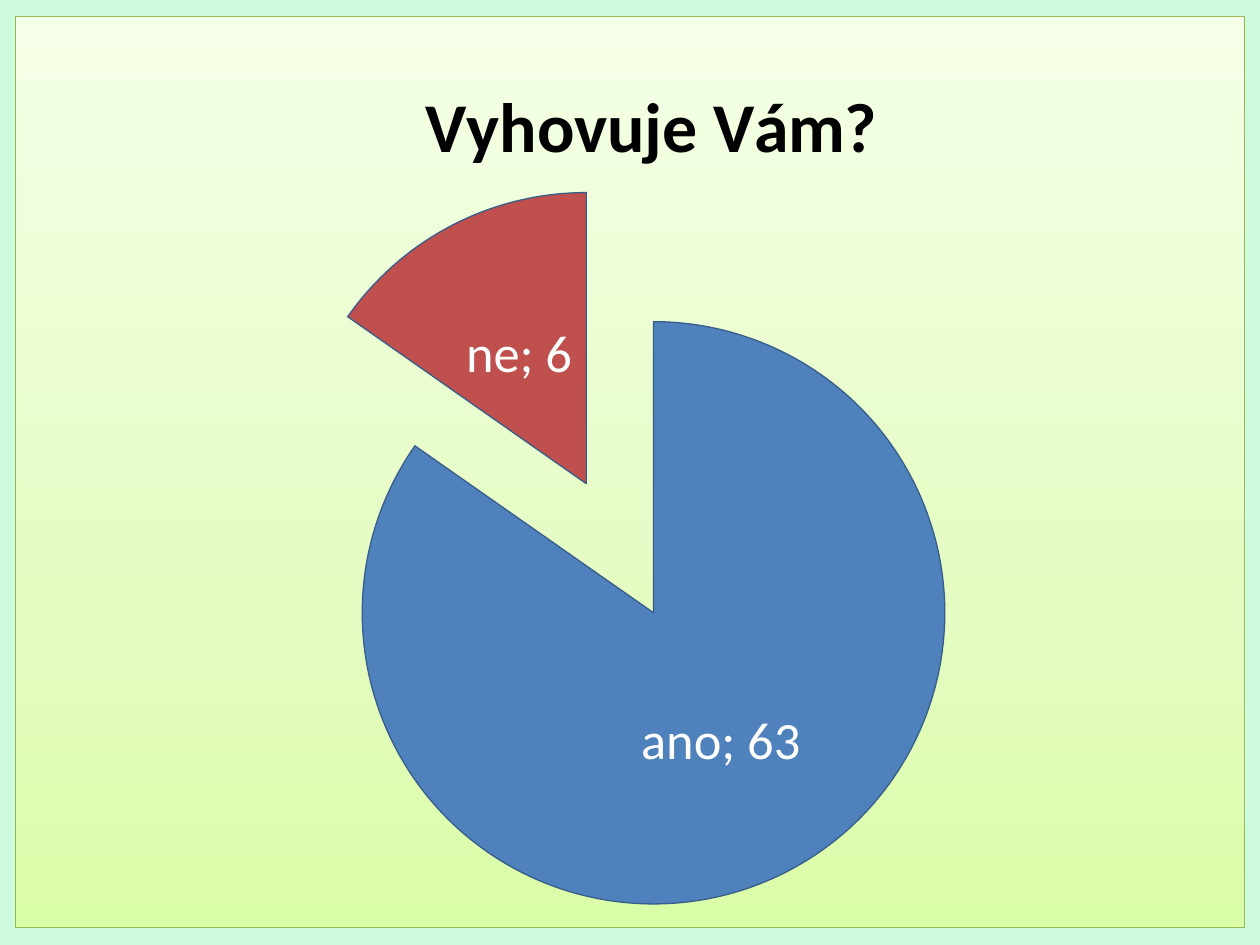
from dataclasses import dataclass

from lxml import etree
from pptx import Presentation
from pptx.chart.data import CategoryChartData
from pptx.dml.color import RGBColor
from pptx.enum.chart import XL_CHART_TYPE, XL_LABEL_POSITION
from pptx.oxml import parse_xml
from pptx.oxml.ns import nsdecls, qn
from pptx.util import Emu, Pt

PIE = XL_CHART_TYPE.PIE
CENTER = XL_LABEL_POSITION.CENTER
EMU_PER_PX = 914400 // 126

BACKGROUND = RGBColor(0xCD, 0xFB, 0xDC)
BLACK = RGBColor(0x00, 0x00, 0x00)
WHITE = RGBColor(0xFF, 0xFF, 0xFF)
BLUE = RGBColor(0x4F, 0x81, 0xBD)
RED = RGBColor(0xC0, 0x50, 0x4D)
SLICE_BORDER = RGBColor(0x38, 0x5D, 0x8A)
PANEL_BORDER = RGBColor(0x98, 0xB9, 0x55)
PANEL_STOPS = {
    0: RGBColor(0xDA, 0xFD, 0xA7),
    35: RGBColor(0xE4, 0xFC, 0xC2),
    100: RGBColor(0xF5, 0xFF, 0xE7),
}

TITLE_FORMAT = {"name": "Calibri", "size": Pt(40), "bold": True}
LABEL_FORMAT = {"name": "Calibri", "size": Pt(30), "bold": False}
LABEL_CONTENT = {"show_value": True, "show_category_name": True, "position": CENTER}

# Chart size in px; its inner parts are placed as fractions of it
CHART_WIDTH = 1230
CHART_HEIGHT = 912


@dataclass
class Slice:
    category: str
    value: int
    label: str
    color: RGBColor


SLICES = [
    Slice("ano", 61, "ano; 63", BLUE),
    Slice("ne", 11, "ne; 6", RED),
]


def px(length: int) -> Emu:
    return Emu(length * EMU_PER_PX)


def set_format(target, values: dict) -> None:
    for name, value in values.items():
        setattr(target, name, value)


def write_text(text_frame, text: str, text_format: dict, color: RGBColor) -> None:
    run = text_frame.paragraphs[0].add_run()
    run.text = text
    set_format(run.font, text_format)
    run.font.color.rgb = color


def set_layout(parent, index: int, target: str = "", **lengths: int) -> None:
    """Place a chart part by lengths in px within the chart."""
    for old_layout in parent.findall(qn("c:layout")):
        parent.remove(old_layout)
    layout = etree.Element(qn("c:layout"))
    manual = etree.SubElement(layout, qn("c:manualLayout"))
    values = {"layoutTarget": target} if target else {}
    values.update(xMode="edge", yMode="edge")
    for name, length in lengths.items():
        values[name] = length / (CHART_WIDTH if name in "xw" else CHART_HEIGHT)
    for name, value in values.items():
        etree.SubElement(manual, qn(f"c:{name}")).set("val", str(value))
    parent.insert(index, layout)


def fill_panel(chart) -> None:
    """Give the chart area its gradient and border."""
    stops = "".join(
        f'<a:gs pos="{percent * 1000}"><a:srgbClr val="{color}"/></a:gs>'
        for percent, color in PANEL_STOPS.items()
    )
    properties = parse_xml(
        f'<c:spPr {nsdecls("c", "a")}>'
        f'<a:gradFill><a:gsLst>{stops}</a:gsLst><a:lin ang="16200000"/></a:gradFill>'
        f'<a:ln w="{Pt(0.75)}"><a:solidFill><a:srgbClr val="{PANEL_BORDER}"/>'
        "</a:solidFill></a:ln></c:spPr>"
    )
    chart.element.find(qn("c:chart")).addnext(properties)


def add_title(chart, text: str) -> None:
    write_text(chart.chart_title.text_frame, text, TITLE_FORMAT, BLACK)
    title = chart.element.find(qn("c:chart")).find(qn("c:title"))
    set_layout(title, 1, x=398, y=49)
    overlay = title.find(qn("c:overlay"))
    if overlay is None:
        overlay = etree.Element(qn("c:overlay"))
        title.find(qn("c:layout")).addnext(overlay)
    overlay.set("val", "1")


def format_slices(chart, explosion_percent: int) -> None:
    plot = chart.plots[0]
    plot.vary_by_categories = True
    series = plot.series[0]
    explosion = etree.Element(qn("c:explosion"))
    explosion.set("val", str(explosion_percent))
    series._element.find(qn("c:cat")).addprevious(explosion)
    for index, part in enumerate(SLICES):
        point = series.points[index]
        point.format.fill.solid()
        point.format.fill.fore_color.rgb = part.color
        point.format.line.color.rgb = SLICE_BORDER
        point.format.line.width = Pt(0.75)
        label = point.data_label
        write_text(label.text_frame, part.label, LABEL_FORMAT, WHITE)
        label.position = CENTER

    # Labels show category and value
    labels = series.data_labels
    set_format(labels, LABEL_CONTENT)
    set_format(labels.font, LABEL_FORMAT)
    labels.font.color.rgb = WHITE
    for show_category in series._element.iter(qn("c:showCatName")):
        show_category.set("val", "1")


def add_pie(slide, left: int, top: int) -> None:
    chart_data = CategoryChartData()
    chart_data.categories = [part.category for part in SLICES]
    chart_data.add_series("Series 1", [part.value for part in SLICES])
    chart = slide.shapes.add_chart(
        PIE, px(left), px(top), px(CHART_WIDTH), px(CHART_HEIGHT), chart_data
    ).chart
    chart.has_legend = False
    chart.font.name = "Calibri"
    chart.font.size = Pt(10)
    chart.font.color.rgb = BLACK
    fill_panel(chart)
    add_title(chart, "Vyhovuje Vám?")
    format_slices(chart, explosion_percent=25)
    plot_area = chart.element.find(qn("c:chart")).find(qn("c:plotArea"))
    set_layout(plot_area, 0, "inner", x=110, y=168, w=990, h=729)


def main() -> None:
    presentation = Presentation()
    presentation.slide_width = px(1260)
    presentation.slide_height = px(945)
    blank_layout = presentation.slide_layouts[6]
    slide = presentation.slides.add_slide(blank_layout)

    # Pale green background
    slide.background.fill.solid()
    slide.background.fill.fore_color.rgb = BACKGROUND

    # Survey answers
    add_pie(slide, left=15, top=16)

    presentation.save("out.pptx")


if __name__ == "__main__":
    main()
